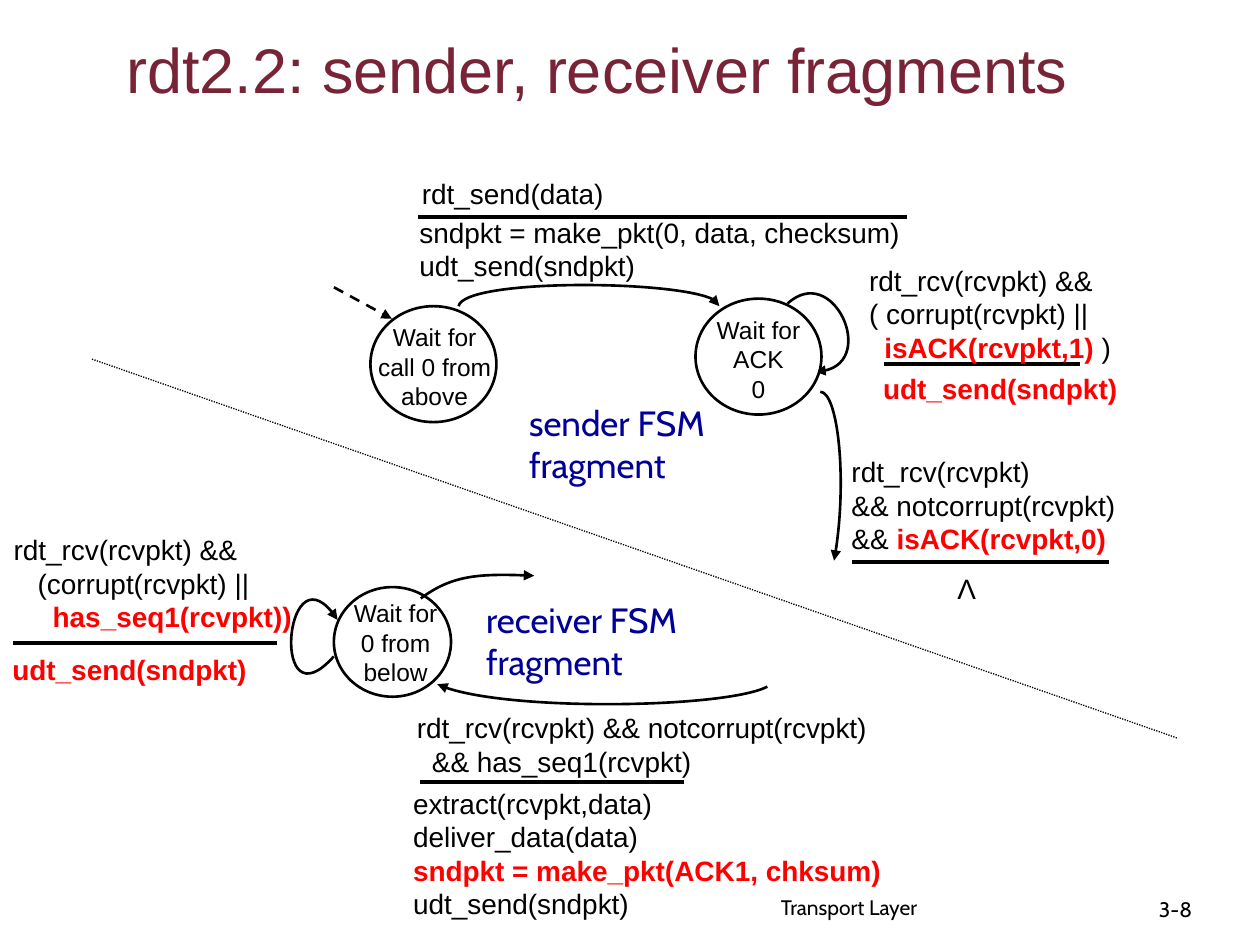
"""Build the rdt2.2 sender and receiver FSM fragments slide."""
from dataclasses import dataclass
from typing import NamedTuple

from lxml.etree import SubElement
from pptx import Presentation
from pptx.dml.color import RGBColor
from pptx.enum.dml import MSO_LINE
from pptx.enum.shapes import MSO_CONNECTOR, MSO_SHAPE
from pptx.enum.text import MSO_ANCHOR, PP_ALIGN
from pptx.oxml.ns import qn
from pptx.util import Inches, Pt


@dataclass(frozen=True)
class Theme:
    ink: RGBColor = RGBColor(0, 0, 0)
    paper: RGBColor = RGBColor(255, 255, 255)
    title: RGBColor = RGBColor(0x78, 0x23, 0x36)
    accent: RGBColor = RGBColor(255, 0, 0)
    caption: RGBColor = RGBColor(0, 0, 0x99)
    body_font: str = "Arial"
    caption_font: str = "Cabin"
    title_pt: int = 36
    caption_pt: int = 20
    code_pt: int = 16
    state_pt: int = 14
    footer_pt: int = 12
    leading: float = 1.2
    rule_pt: float = 2.25
    arc_pt: float = 1.5
    divider_pt: float = 0.75


T = Theme()


class Box(NamedTuple):
    x: float
    y: float
    w: float
    h: float


class Line(NamedTuple):
    plain: str = ""
    red: str = ""
    after: str = ""
    indent: float = 0


class Label(NamedTuple):
    box: Box
    lines: list
    size: int = T.code_pt
    font: str = T.body_font
    color: RGBColor = T.ink
    align: PP_ALIGN = PP_ALIGN.LEFT
    wrap: bool = True


class State(NamedTuple):
    circle: Box
    text: Box
    lines: list


class Arc(NamedTuple):
    points: list
    end: str = "tailEnd"


class Rule(NamedTuple):
    start: tuple
    stop: tuple
    width: float = T.rule_pt
    dash: MSO_LINE | None = None
    arrow: bool = False


SENDER_ARCS = [
    Arc([(3.64, 2.43), (3.68, 2.21), (5.71, 2.22), (5.71, 2.43)]),
    Arc([(6.25, 2.41), (6.61, 2.08), (7, 2.94), (6.47, 2.95)]),
    Arc([(6.62, 4.45), (6.73, 3.85), (6.65, 3.11), (6.51, 3.11)], "headEnd"),
]
RECEIVER_ARCS = [
    Arc([(3.34, 4.75), (3.58, 4.57), (3.82, 4.55), (4.24, 4.57)]),
    Arc([(3.47, 5.43), (3.93, 5.65), (5.76, 5.62), (6.09, 5.45)], "headEnd"),
    Arc([(2.65, 5.21), (2.15, 5.77), (2.26, 4.28), (2.68, 4.92)]),
]
STATES = [
    State(Box(2.94, 2.43, 1, 0.92), Box(2.87, 2.51, 1.16, 0.67), [Line("Wait for call 0 from above")]),
    State(Box(5.52, 2.37, 1, 0.92), Box(5.44, 2.45, 1.16, 0.67), [Line("Wait for ACK"), Line("0")]),
    State(Box(2.65, 4.66, 0.93, 0.87), Box(2.7, 4.7, 0.88, 0.67), [Line("Wait for"), Line("0 from below")]),
]
RULES = [
    Rule((3.32, 1.72), (7.2, 1.72)),
    Rule((7.02, 2.89), (8.57, 2.89)),
    Rule((6.76, 4.46), (8.8, 4.46)),
    Rule((3.33, 6.21), (5.43, 6.21)),
    Rule((0.1, 5.1), (2.2, 5.1)),
    Rule((2.65, 2.28), (3.11, 2.53), T.arc_pt, MSO_LINE.DASH, True),
    Rule((0.73, 2.85), (9.35, 5.86), T.divider_pt, MSO_LINE.ROUND_DOT),
]
CODE = [
    Label(Box(3.25, 1.35, 1.89, 0.31), [Line("rdt_send(data)")]),
    Label(Box(3.23, 1.66, 4.07, 0.44), [Line("sndpkt = make_pkt(0, data, checksum)"), Line("udt_send(sndpkt)")]),
    Label(Box(6.8, 2.04, 2.97, 0.62), [Line("rdt_rcv(rcvpkt) &&"), Line("( corrupt(rcvpkt) ||"),
                                       Line(red="isACK(rcvpkt,1)", after=" )", indent=0.12)]),
    Label(Box(6.91, 2.9, 2.32, 0.44), [Line(red="udt_send(sndpkt)")]),
    Label(Box(6.66, 3.56, 2.64, 0.62), [Line("rdt_rcv(rcvpkt)"), Line("&& notcorrupt(rcvpkt)"),
                                        Line("&& ", "isACK(rcvpkt,0)")]),
    Label(Box(7.5, 4.49, 0.41, 0.37), [Line("Λ")]),
    Label(Box(0.01, 4.18, 2.58, 0.7), [Line("rdt_rcv(rcvpkt) &&"), Line("(corrupt(rcvpkt) ||", indent=0.19),
                                       Line(red="has_seq1(rcvpkt))", indent=0.31)]),
    Label(Box(0, 5.13, 2.23, 0.45), [Line(red="udt_send(sndpkt)")]),
    Label(Box(3.21, 5.59, 4.31, 0.62), [Line("rdt_rcv(rcvpkt) && notcorrupt(rcvpkt)"),
                                        Line("&& has_seq1(rcvpkt)", indent=0.12)]),
    Label(Box(3.18, 6.19, 4.57, 0.76), [Line("extract(rcvpkt,data)"), Line("deliver_data(data)"),
                                        Line(red="sndpkt = make_pkt(ACK1, chksum)"), Line("udt_send(sndpkt)")]),
]
CAPTIONS = [
    Label(Box(x, y, w, 0.77), [Line(who), Line("fragment")], T.caption_pt, T.caption_font, T.caption, wrap=False)
    for x, y, w, who in [(4.1, 3.14, 1.62, "sender FSM"), (3.76, 4.7, 1.77, "receiver FSM")]
]
FOOTERS = [
    Label(box, [Line(text)], T.footer_pt, T.caption_font)
    for box, text in [(Box(6.1, 7.05, 3.17, 0.31), "Transport Layer"), (Box(9.1, 7.07, 0.74, 0.3), "3-8")]
]
TITLE = Label(Box(0.49, 0.19, 8.5, 0.97), [Line("rdt2.2: sender, receiver fragments")],
              T.title_pt, color=T.title, align=PP_ALIGN.CENTER)


def fill_text(sp, label: Label) -> None:
    """Write the label's lines into a shape's text frame."""
    tf = sp.text_frame
    tf.word_wrap = label.wrap
    tf.vertical_anchor = MSO_ANCHOR.TOP
    for i, line in enumerate(label.lines):
        p = tf.add_paragraph() if i else tf.paragraphs[0]
        p.alignment = label.align
        p.line_spacing = Pt(label.size * T.leading)
        if line.indent:
            p._p.get_or_add_pPr().set("marL", str(Inches(line.indent)))
        p.font.name, p.font.size = label.font, Pt(label.size)
        p.font.color.rgb = T.accent if line.red and not line.plain + line.after else label.color
        for text, red in [(line.plain, False), (line.red, True), (line.after, False)]:
            if text:
                r = p.add_run()
                r.text = text
                if red:
                    r.font.bold = True
                    r.font.color.rgb = T.accent


def add_label(s, label: Label) -> None:
    """Add a text box."""
    fill_text(s.shapes.add_textbox(*map(Inches, label.box)), label)


def stroke(sp, width: float) -> None:
    """Give a shape or connector a solid ink line."""
    sp.line.color.rgb = T.ink
    sp.line.width = Pt(width)


def add_arrowhead(sp, end: str) -> None:
    """Put a triangle on one end of a line."""
    SubElement(sp._element.spPr.find(qn("a:ln")), qn(f"a:{end}"), type="triangle")


def add_state(s, state: State) -> None:
    """Add a state circle and its caption."""
    sp = s.shapes.add_shape(MSO_SHAPE.OVAL, *map(Inches, state.circle))
    sp.shadow.inherit = False
    sp.fill.solid()
    sp.fill.fore_color.rgb = T.paper
    stroke(sp, T.arc_pt)
    add_label(s, Label(state.text, state.lines, T.state_pt, align=PP_ALIGN.CENTER))


def add_arc(s, arc: Arc) -> None:
    """Add a cubic curve with an arrowhead."""
    start, *rest = [(Inches(x), Inches(y)) for x, y in arc.points]
    sp = s.shapes.build_freeform(*start).add_line_segments(rest, close=False).convert_to_shape()
    outline = sp._element.spPr.find(".//" + qn("a:path"))
    segments = outline.findall(qn("a:lnTo"))
    curve = SubElement(outline, qn("a:cubicBezTo"))
    for segment in segments:
        curve.append(segment[0])
        outline.remove(segment)
    sp.shadow.inherit = False
    sp.fill.background()
    stroke(sp, T.arc_pt)
    add_arrowhead(sp, arc.end)


def add_rule(s, rule: Rule) -> None:
    """Add a straight line."""
    c = s.shapes.add_connector(MSO_CONNECTOR.STRAIGHT, *map(Inches, rule.start + rule.stop))
    stroke(c, rule.width)
    if rule.dash:
        c.line.dash_style = rule.dash
    if rule.arrow:
        add_arrowhead(c, "tailEnd")
    SubElement(c._element.spPr, qn("a:effectLst"))


def main() -> None:
    """Assemble and save the slide."""
    prs = Presentation()
    prs.slide_width, prs.slide_height = Inches(10), Inches(7.5)
    s = prs.slides.add_slide(prs.slide_layouts[5])
    title = s.shapes.title
    title.left, title.top, title.width, title.height = map(Inches, TITLE.box)
    fill_text(title, TITLE)
    for draw, items in [(add_arc, SENDER_ARCS), (add_state, STATES), (add_arc, RECEIVER_ARCS),
                        (add_rule, RULES), (add_label, CODE + CAPTIONS + FOOTERS)]:
        for item in items:
            draw(s, item)
    prs.save("out.pptx")


if __name__ == "__main__":
    main()
